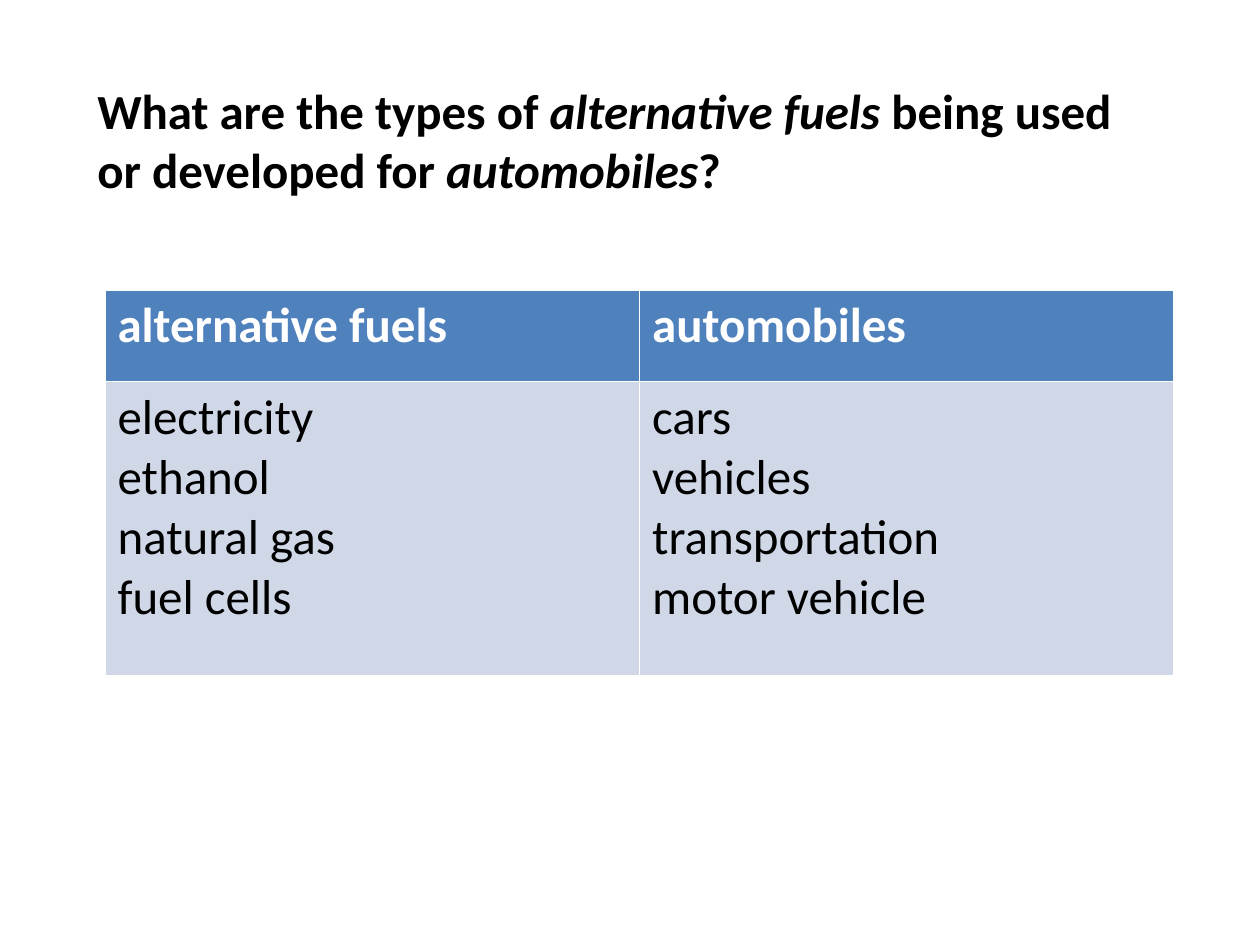
from pptx import Presentation
from pptx.dml.color import RGBColor
from pptx.util import Pt

COLORS = {"text": "000000", "header_text": "FFFFFF", "header": "4F81BD", "body": "D0D8E8"}

QUESTION = [
    ("What are the types of ", False),
    ("alternative fuels ", True),
    ("being used or developed for ", False),
    ("automobiles", True),
    ("?", False),
]
KEYWORDS = {
    "alternative fuels": ["electricity", "ethanol", "natural gas", "fuel cells"],
    "automobiles": ["cars", "vehicles", "transportation", "motor vehicle"],
}


class SlideBuilder:
    font_name = "Calibri"
    font_size = 28

    def __init__(self, slide):
        self.slide = slide

    def style(self, run, color, bold=False, italic=False):
        font = run.font
        font.name = self.font_name
        font.size = Pt(self.font_size)
        font.bold = bold
        font.italic = italic
        font.color.rgb = RGBColor.from_string(COLORS[color])

    def question(self, left, top, width, height, parts):
        box = self.slide.shapes.add_textbox(Pt(left), Pt(top), Pt(width), Pt(height))
        box.text_frame.word_wrap = True
        paragraph = box.text_frame.paragraphs[0]
        for text, italic in parts:
            run = paragraph.add_run()
            run.text = text
            self.style(run, "text", bold=True, italic=italic)

    def cell(self, cell, lines, fill, color, bold=False):
        cell.fill.solid()
        cell.fill.fore_color.rgb = RGBColor.from_string(COLORS[fill])
        cell.text_frame.text = "\n".join(lines)
        for paragraph in cell.text_frame.paragraphs:
            for run in paragraph.runs:
                self.style(run, color, bold)

    def table(self, left, top, width, row_heights, columns):
        # The default table style supplies the white cell borders
        frame = self.slide.shapes.add_table(
            len(row_heights), len(columns),
            Pt(left), Pt(top), Pt(width), Pt(sum(row_heights)))
        table = frame.table
        for row, height in zip(table.rows, row_heights):
            row.height = Pt(height)
        for index, (heading, words) in enumerate(columns.items()):
            self.cell(table.cell(0, index), [heading], "header", "header_text", bold=True)
            self.cell(table.cell(1, index), words, "body", "text")


def main():
    presentation = Presentation()
    presentation.slide_width = Pt(720)
    presentation.slide_height = Pt(540)
    builder = SlideBuilder(presentation.slides.add_slide(presentation.slide_layouts[6]))

    # Question at the top
    builder.question(48.5, 42.5, 610.5, 75, QUESTION)

    # Keywords and their synonyms
    builder.table(60, 165.6, 611, [52.4, 168], KEYWORDS)

    presentation.save("out.pptx")


if __name__ == "__main__":
    main()
